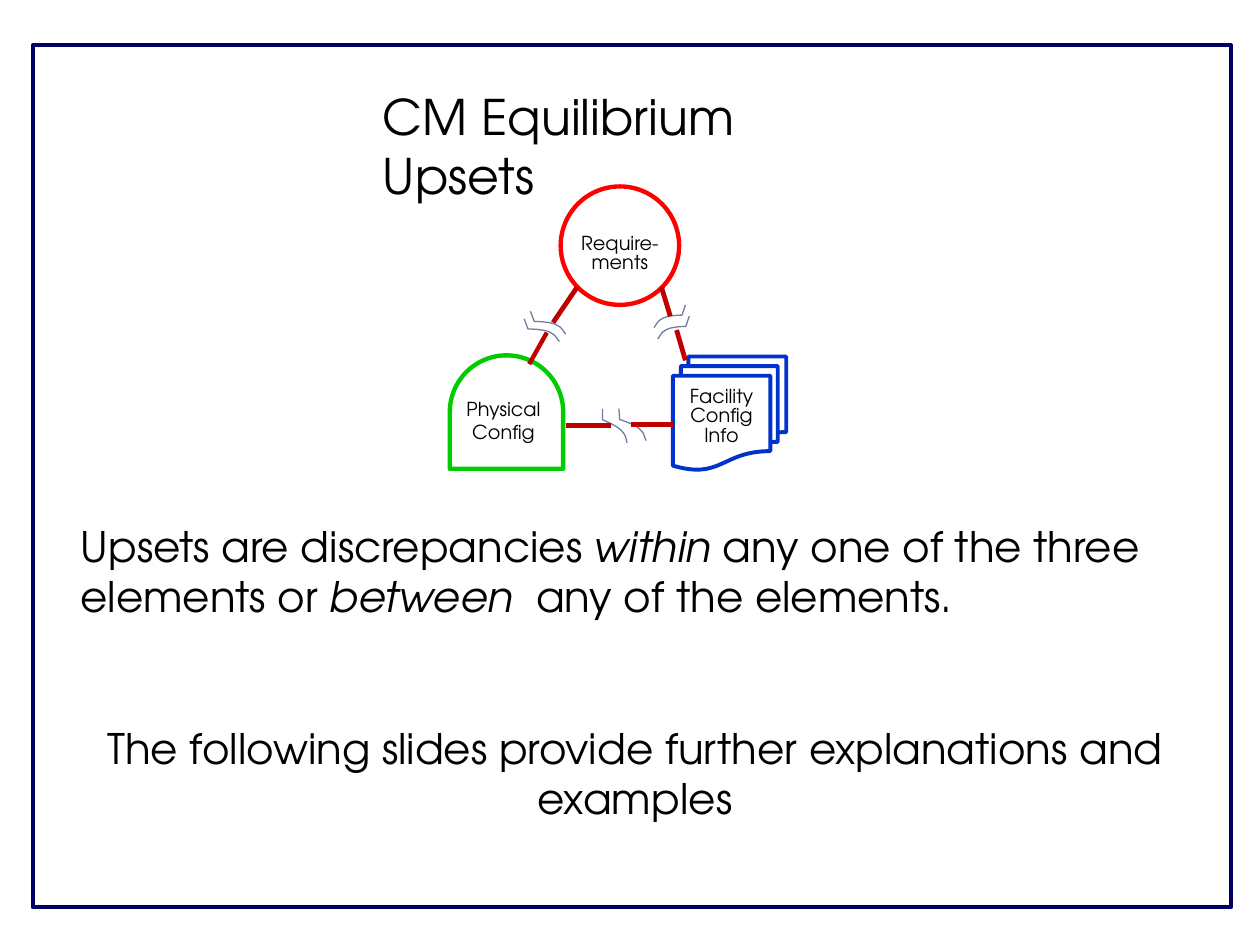
from lxml import etree
from pptx import Presentation
from pptx.dml.color import RGBColor
from pptx.enum.shapes import MSO_CONNECTOR, MSO_SHAPE
from pptx.enum.text import MSO_ANCHOR, PP_ALIGN
from pptx.oxml.ns import qn
from pptx.util import Inches, Pt

STRAIGHT = MSO_CONNECTOR.STRAIGHT
CENTER = PP_ALIGN.CENTER
TOP = MSO_ANCHOR.TOP
FONT = "TeX Gyre Adventor"
COLORS = {
    "text": "000000", "paper": "FFFFFF", "frame": "000066", "requirements": "FF0000",
    "information": "0033CC", "physical": "00CC00", "link": "C00000", "break": "727CA3",
}


def color(name):
    return RGBColor.from_string(COLORS[name])


def style_text(paragraph, size):
    paragraph.font.name = FONT
    paragraph.font.size = Pt(size)
    paragraph.font.color.rgb = color("text")


presentation = Presentation()
presentation.slide_width = Inches(10)
presentation.slide_height = Inches(7.5)
slide = presentation.slides.add_slide(presentation.slide_layouts[6])

# Title
title = slide.shapes.add_textbox(Inches(2.94), Inches(0.64), Inches(4.2), Inches(0.57))
title.text_frame.word_wrap = True
paragraph = title.text_frame.paragraphs[0]
paragraph.text = "CM Equilibrium Upsets"
style_text(paragraph, 28)

# Explanation, with a centred closing line
body = slide.shapes.add_textbox(Inches(0.54), Inches(4.08), Inches(9), Inches(2.52))
body.text_frame.word_wrap = True
paragraph = body.text_frame.paragraphs[0]
for text, italic in [
    ("Upsets are discrepancies ", False),
    ("within", True),
    (" any one of the three elements or ", False),
    ("between ", True),
    (" any of the elements.", False),
]:
    run = paragraph.add_run()
    run.text = text
    run.font.italic = italic
style_text(paragraph, 24)
paragraph = body.text_frame.add_paragraph()
paragraph.text = "The following slides provide further explanations and examples"
paragraph.alignment = CENTER
paragraph.space_before = Pt(58)
style_text(paragraph, 24)

# Slide frame
frame = slide.shapes.add_shape(
    MSO_SHAPE.RECTANGLE, Inches(0.26), Inches(0.36), Inches(9.51), Inches(6.84))
frame.shadow.inherit = False
frame.fill.background()
frame.line.color.rgb = color("frame")
frame.line.width = Pt(2.5)

# The three elements: insets are left, top, right, bottom
diagram = slide.shapes.add_group_shape()
elements = [
    (MSO_SHAPE.OVAL, 4.45, 1.48, 0.94, "requirements", 2.5,
     "Require-ments", (0, 0.25, 0, 0), 11),
    (MSO_SHAPE.FLOWCHART_MULTIDOCUMENT, 5.34, 2.83, 0.9, "information", 2.25,
     "Facility\vConfig\vInfo", (0, 0.1, 0, 0), 11),
    (MSO_SHAPE.FLOWCHART_DELAY, 3.57, 2.82, 0.9, "physical", 2.5,
     "Physical\vConfig", (0.1, 0, 0.2, 0), None),
]
for kind, left, top, side, outline, weight, text, insets, spacing in elements:
    shape = diagram.shapes.add_shape(
        kind, Inches(left), Inches(top), Inches(side), Inches(side))
    shape.shadow.inherit = False
    shape.fill.solid()
    shape.fill.fore_color.rgb = color("paper")
    shape.line.color.rgb = color(outline)
    shape.line.width = Pt(weight)
    text_frame = shape.text_frame
    text_frame.word_wrap = True
    text_frame.vertical_anchor = TOP
    (text_frame.margin_left, text_frame.margin_top,
     text_frame.margin_right, text_frame.margin_bottom) = map(Inches, insets)
    paragraph = text_frame.paragraphs[0]
    paragraph.text = text
    paragraph.alignment = CENTER
    if spacing:
        paragraph.line_spacing = Pt(spacing)
    style_text(paragraph, 11)
    if kind == MSO_SHAPE.FLOWCHART_DELAY:
        # Stand the dome upright and turn its text back to horizontal
        shape.rotation = 270
        text_frame._txBody.find(qn("a:bodyPr")).set("vert", "eaVert")

# Break marks share one outline, in fractions of width and height
curves = [
    [(1, 1), (0.93, 0.89), (0.89, 0.72), (0.79, 0.65)],
    [(0.79, 0.65), (0.65, 0.48), (0.27, 0.45), (0.11, 0.45)],
]
STEPS = 8
outline = [curves[0][0]]
for curve in curves:
    for step in range(1, STEPS + 1):
        t = step / STEPS
        weights = ((1 - t) ** 3, 3 * t * (1 - t) ** 2, 3 * t * t * (1 - t), t ** 3)
        outline.append(tuple(
            sum(weight * point[axis] for weight, point in zip(weights, curve))
            for axis in (0, 1)))
outline.append((0, 0))

MARK_HEIGHT = 0.18
for left, top, width, mirrored, rotation in [
    (5.19, 2.42, 0.25, True, 0),
    (4.16, 2.53, 0.28, False, 0),
    (4.21, 2.47, 0.28, False, 0),
    (4.88, 3.28, 0.28, False, 16.9),
    (4.74, 3.29, 0.28, False, 21.3),
    (5.22, 2.51, 0.25, True, 0),
]:
    points = [
        (Inches(left + width * (1 - x if mirrored else x)), Inches(top + MARK_HEIGHT * y))
        for x, y in outline]
    builder = diagram.shapes.build_freeform(*points[0])
    builder.add_line_segments(points[1:], close=False)
    mark = builder.convert_to_shape()
    mark.shadow.inherit = False
    mark.fill.background()
    mark.line.color.rgb = color("break")
    mark.line.width = Pt(0.75)
    mark.rotation = rotation

# Broken links between the elements
for x1, y1, x2, y2, weight in [
    (4.58, 2.28, 4.39, 2.56, 2.75),
    (4.34, 2.64, 4.2, 2.89, 2.5),
    (5.25, 2.28, 5.32, 2.51, 2.75),
    (5.37, 2.62, 5.44, 2.86, 2.75),
    (4.85, 3.38, 4.49, 3.38, 2.75),
    (5.34, 3.37, 5.01, 3.37, 2.75),
]:
    link = diagram.shapes.add_connector(
        STRAIGHT, Inches(x1), Inches(y1), Inches(x2), Inches(y2))
    link.line.color.rgb = color("link")
    link.line.width = Pt(weight)
    etree.SubElement(link._element.spPr, qn("a:effectLst"))

presentation.save("out.pptx")
